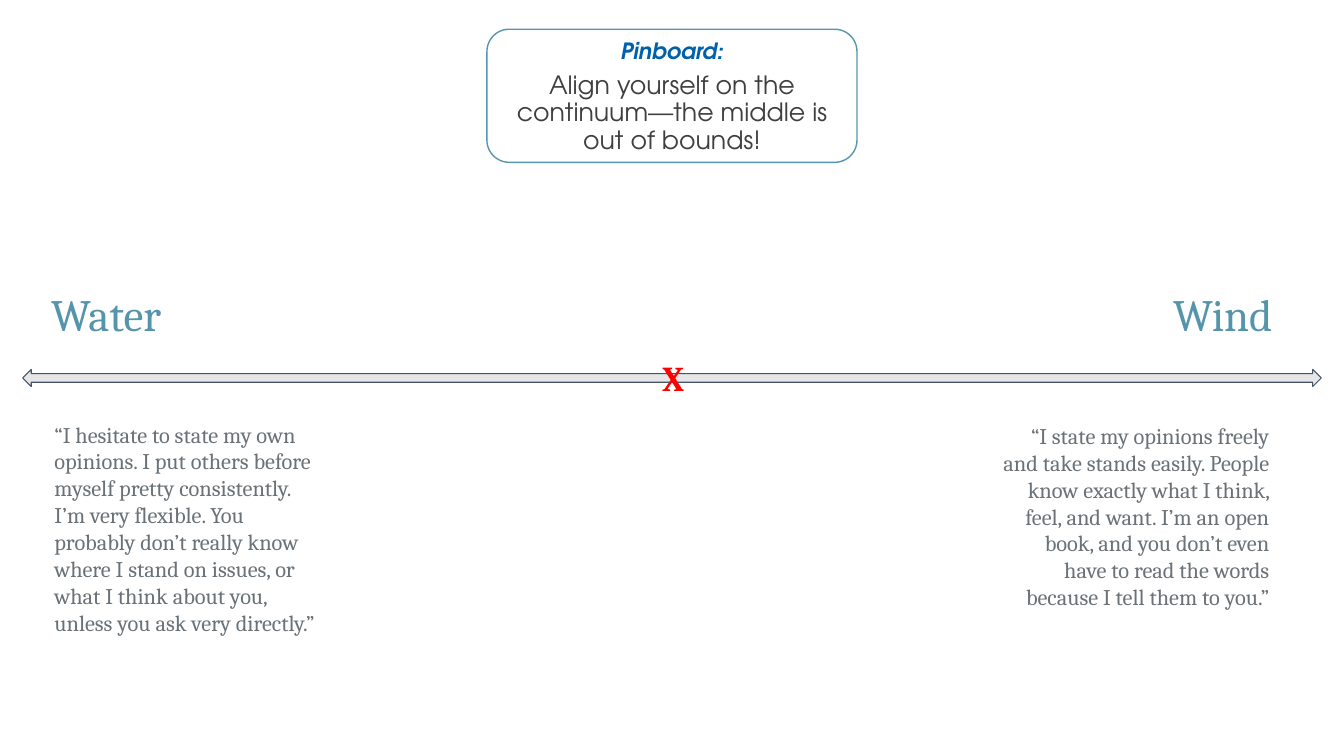
from pptx import Presentation
from pptx.dml.color import RGBColor
from pptx.enum.shapes import MSO_SHAPE as Preset
from pptx.enum.text import MSO_ANCHOR as Anchor, PP_ALIGN as Align
from pptx.util import Inches, Pt

WIDTH, HEIGHT = 13.33, 7.5
SERIF, SANS = "Cambria", "TeX Gyre Adventor"
TEAL, GREY = "5595AC", "6A7278"

ENDS = [
    {
        "name": "Water",
        "quote": "“I hesitate to state my own opinions. I put others before myself "
                 "pretty consistently. I’m very flexible. You probably don’t really "
                 "know where I stand on issues, or what I think about you, unless "
                 "you ask very directly.”",
        "align": Align.LEFT, "name_left": 0.16, "quote_at": (0.41, 4.91),
    },
    {
        "name": "Wind",
        "quote": "“I state my opinions freely and take stands easily. People know "
                 "exactly what I think, feel, and want. I’m an open book, and you "
                 "don’t even have to read the words because I tell them to you.”",
        "align": Align.RIGHT, "name_left": 9.55, "quote_at": (9.8, 4.79),
    },
]
PROMPT_TITLE = "Pinboard:"
PROMPT = "Align yourself on the continuum—the middle is out of bounds!"

ROW = 0.66
NAME_TOP, NAME_WIDTH, QUOTE_WIDTH = 2.8, 3.17, 2.92
ARROW_WIDTH, ARROW_HEIGHT, ARROW_MIDDLE = 12.88, 0.17, HEIGHT / 2
MARK_WIDTH = 0.45
CARD_WIDTH, CARD_HEIGHT, CARD_TOP = 3.67, 1.32, 0.29


def color(value):
    return RGBColor.from_string(value)


def centered(width):
    return (WIDTH - width) / 2


def add_outline(page, preset, area, line, weight, fill=None):
    shape = page.shapes.add_shape(preset, *map(Inches, area))
    shape.shadow.inherit = False
    if fill:
        shape.fill.solid()
        shape.fill.fore_color.rgb = color(fill)
    else:
        shape.fill.background()
    shape.line.color.rgb = color(line)
    shape.line.width = Pt(weight)
    return shape


def add_box(page, area, padding=(0.1, 0.05), anchor=Anchor.TOP):
    frame = page.shapes.add_textbox(*map(Inches, area)).text_frame
    frame.word_wrap = True
    frame.vertical_anchor = anchor
    frame.margin_left = frame.margin_right = Inches(padding[0])
    frame.margin_top = frame.margin_bottom = Inches(padding[1])
    return frame


def add_span(para, text, size, ink, font=SERIF, align=Align.LEFT, bold=False, italic=False):
    para.alignment = align
    span = para.add_run()
    span.text = text
    span.font.name = font
    span.font.size = Pt(size)
    span.font.color.rgb = color(ink)
    span.font.bold = bold
    span.font.italic = italic


def add_end(page, end):
    padded = {"padding": (0.13, 0.13), "anchor": Anchor.MIDDLE}
    quote = add_box(page, (*end["quote_at"], QUOTE_WIDTH, ROW), **padded)
    add_span(quote.paragraphs[0], end["quote"], 16, GREY, align=end["align"])

    heading = add_box(page, (end["name_left"], NAME_TOP, NAME_WIDTH, ROW))
    para = heading.paragraphs[0]
    para.space_before = Pt(10)
    properties = para._p.get_or_add_pPr()
    properties.set("marL", str(Inches(0.5)))
    properties.set("indent", str(Inches(-0.25)))
    add_span(para, end["name"], 32, TEAL, align=end["align"])


def add_continuum(page):
    area = (centered(ARROW_WIDTH), ARROW_MIDDLE - ARROW_HEIGHT / 2, ARROW_WIDTH, ARROW_HEIGHT)
    add_outline(page, Preset.LEFT_RIGHT_ARROW, area, "44546A", 0.75, "E7E6E6")
    mark = add_box(page, (centered(MARK_WIDTH), ARROW_MIDDLE - ROW / 2, MARK_WIDTH, ROW),
                   (0.13, 0.13), Anchor.MIDDLE)
    add_span(mark.paragraphs[0], "X", 25, "FF0000", align=Align.CENTER, bold=True)


def add_prompt(page):
    left = centered(CARD_WIDTH)
    add_outline(page, Preset.ROUNDED_RECTANGLE, (left, CARD_TOP, CARD_WIDTH, CARD_HEIGHT),
                "5496AD", 1)
    box = add_box(page, (left, CARD_TOP + 0.06, CARD_WIDTH, 0.96))
    title, body = box.paragraphs[0], box.add_paragraph()
    title.line_spacing = body.line_spacing = 0.9
    body.space_before = Pt(6)
    add_span(title, PROMPT_TITLE, 16, "0061AA", SANS, Align.CENTER, True, True)
    add_span(body, PROMPT, 18, "3F3F3F", SANS, Align.CENTER)


def main():
    deck = Presentation()
    deck.slide_width, deck.slide_height = Inches(WIDTH), Inches(HEIGHT)
    page = deck.slides.add_slide(deck.slide_layouts[6])
    for end in ENDS:
        add_end(page, end)
    add_continuum(page)
    add_prompt(page)
    deck.save("out.pptx")


if __name__ == "__main__":
    main()
